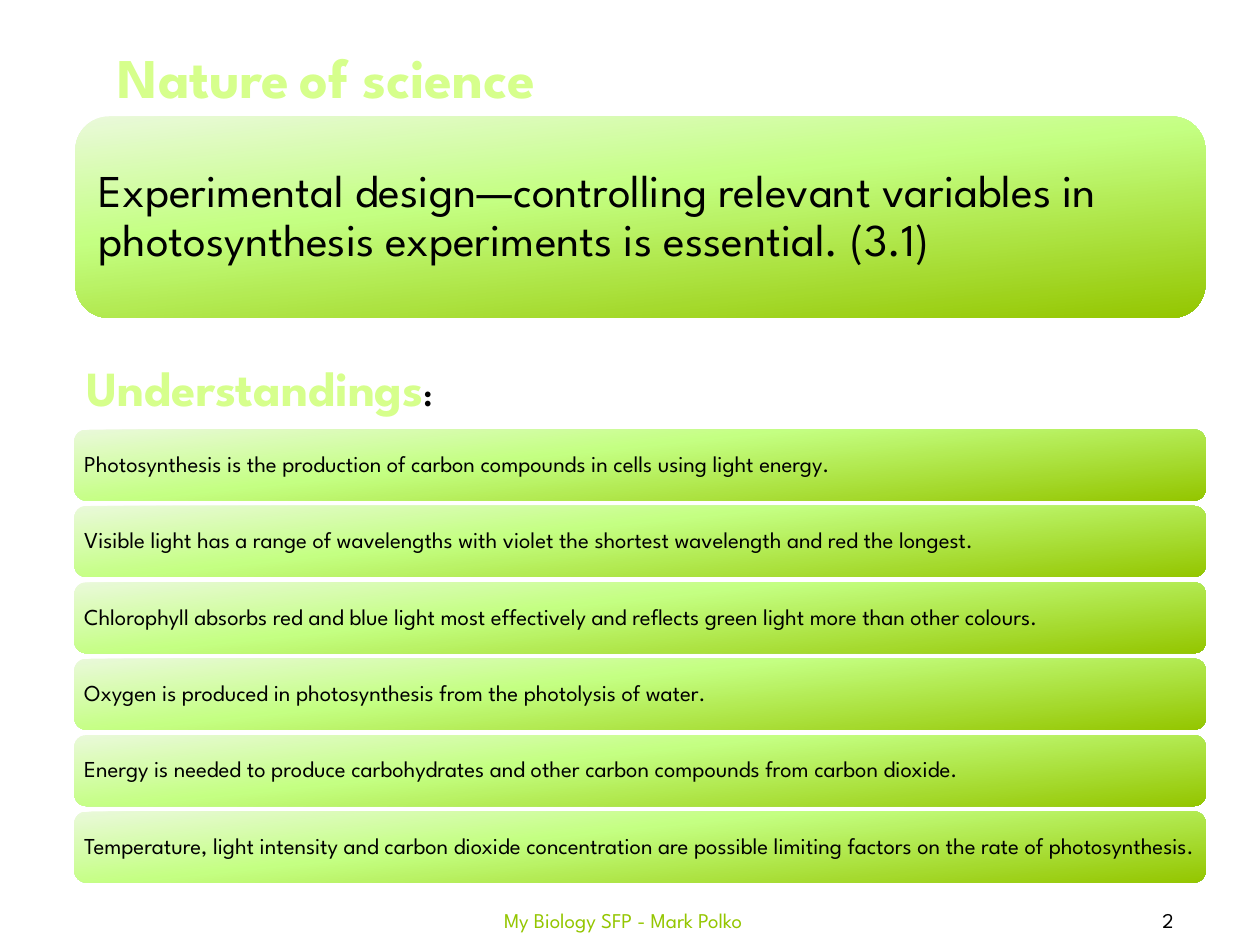
from lxml import etree
from pptx import Presentation
from pptx.dml.color import RGBColor
from pptx.enum.shapes import MSO_SHAPE
from pptx.enum.text import MSO_ANCHOR, MSO_AUTO_SIZE, PP_ALIGN
from pptx.oxml.ns import qn
from pptx.util import Cm, Pt

FONT = "League Spartan"
BLACK = RGBColor(0x00, 0x00, 0x00)
LIME = RGBColor(0xD6, 0xFF, 0x8C)
GREEN = RGBColor(0x94, 0xC6, 0x00)
PALE = RGBColor(0xEA, 0xF9, 0xDA)
BRIGHT = RGBColor(0xC4, 0xFF, 0x82)
GRADIENT = [(0, PALE), (40, BRIGHT), (100, GREEN)]
GRADIENT_ANGLE = 84  # clockwise

HEADING = {"bold": True, "color": LIME}
NATURE = ("Experimental design—controlling relevant variables in "
          "photosynthesis experiments is essential. (3.1)")
UNDERSTANDINGS = [
    "Photosynthesis is the production of carbon compounds in cells using light energy.",
    "Visible light has a range of wavelengths with violet the shortest wavelength and red the longest.",
    "Chlorophyll absorbs red and blue light most effectively and reflects green light more than other colours.",
    "Oxygen is produced in photosynthesis from the photolysis of water.",
    "Energy is needed to produce carbohydrates and other carbon compounds from carbon dioxide.",
    "Temperature, light intensity and carbon dioxide concentration are possible limiting factors "
    "on the rate of photosynthesis.",
]

# box in cm, alignment, runs of (text, format)
HEADINGS = [
    ((1.49, 0.74, 10.19, 1.63), PP_ALIGN.CENTER,
     [("Nature", {"size": 32, **HEADING}),
      (" ", {"size": 20, "bold": True}),
      ("of science", {"size": 32, **HEADING})]),
    ((1.5, 7.09, 8.13, 1.45), PP_ALIGN.LEFT,
     [("Understandings", {"size": 28, **HEADING}),
      (":", {"size": 18, "bold": True})]),
]
FOOTERS = [
    ((21.69, 18.03, 3.71, 1.02), "2", {"size": 12}),
    ((7.7, 18.03, 9.73, 1.02), "My Biology SFP - Mark Polko", {"size": 12, "color": GREEN}),
]

BAR_LEFT, BAR_WIDTH, BAR_HEIGHT = 1.5, 22.81, 1.43
BARS_TOP, BAR_PITCH = 8.66, 1.54


def add_runs(p, runs):
    for text, fmt in runs:
        r = p.add_run()
        r.text = text
        r.font.name = FONT
        r.font.size = Pt(fmt["size"])
        r.font.bold = fmt.get("bold", False)
        r.font.color.rgb = fmt.get("color", BLACK)


def fill_gradient(s):
    """Give the shape the three-stop green gradient."""
    s.fill.gradient()
    s.fill.gradient_angle = 360 - GRADIENT_ANGLE
    stops = s._element.spPr.find(".//" + qn("a:gsLst"))
    for old in list(stops):
        stops.remove(old)
    for percent, color in GRADIENT:
        gs = etree.SubElement(stops, qn("a:gs"), pos=str(percent * 1000))
        etree.SubElement(gs, qn("a:srgbClr"), val=str(color))


def add_panel(slide, box, text, size, inset):
    s = slide.shapes.add_shape(MSO_SHAPE.ROUNDED_RECTANGLE, *map(Cm, box))
    s.shadow.inherit = False
    s.line.fill.background()
    fill_gradient(s)
    tf = s.text_frame
    tf.word_wrap = True
    tf.vertical_anchor = MSO_ANCHOR.MIDDLE
    for side in ("left", "top", "right", "bottom"):
        setattr(tf, f"margin_{side}", Cm(inset))
    p = tf.paragraphs[0]
    p.alignment = PP_ALIGN.LEFT
    p.line_spacing = 0.9
    add_runs(p, [(text, {"size": size})])


def add_text(slide, box, align, runs, **frame):
    tf = slide.shapes.add_textbox(*map(Cm, box)).text_frame
    for name, value in frame.items():
        setattr(tf, name, value)
    p = tf.paragraphs[0]
    p.alignment = align
    add_runs(p, runs)


def main():
    prs = Presentation()
    prs.slide_width, prs.slide_height = Cm(25.4), Cm(19.05)
    slide = prs.slides.add_slide(prs.slide_layouts[6])

    for box, text, fmt in FOOTERS:
        add_text(slide, box, PP_ALIGN.CENTER, [(text, fmt)],
                 word_wrap=True, vertical_anchor=MSO_ANCHOR.MIDDLE)
    for i, text in enumerate(UNDERSTANDINGS):
        box = (BAR_LEFT, BARS_TOP + i * BAR_PITCH, BAR_WIDTH, BAR_HEIGHT)
        add_panel(slide, box, text, size=13, inset=0.13)
    add_panel(slide, (1.52, 2.35, 22.78, 4.06), NATURE, size=26, inset=0.27)
    for box, align, runs in HEADINGS:
        add_text(slide, box, align, runs,
                 word_wrap=False, auto_size=MSO_AUTO_SIZE.SHAPE_TO_FIT_TEXT)

    prs.save("out.pptx")


if __name__ == "__main__":
    main()
